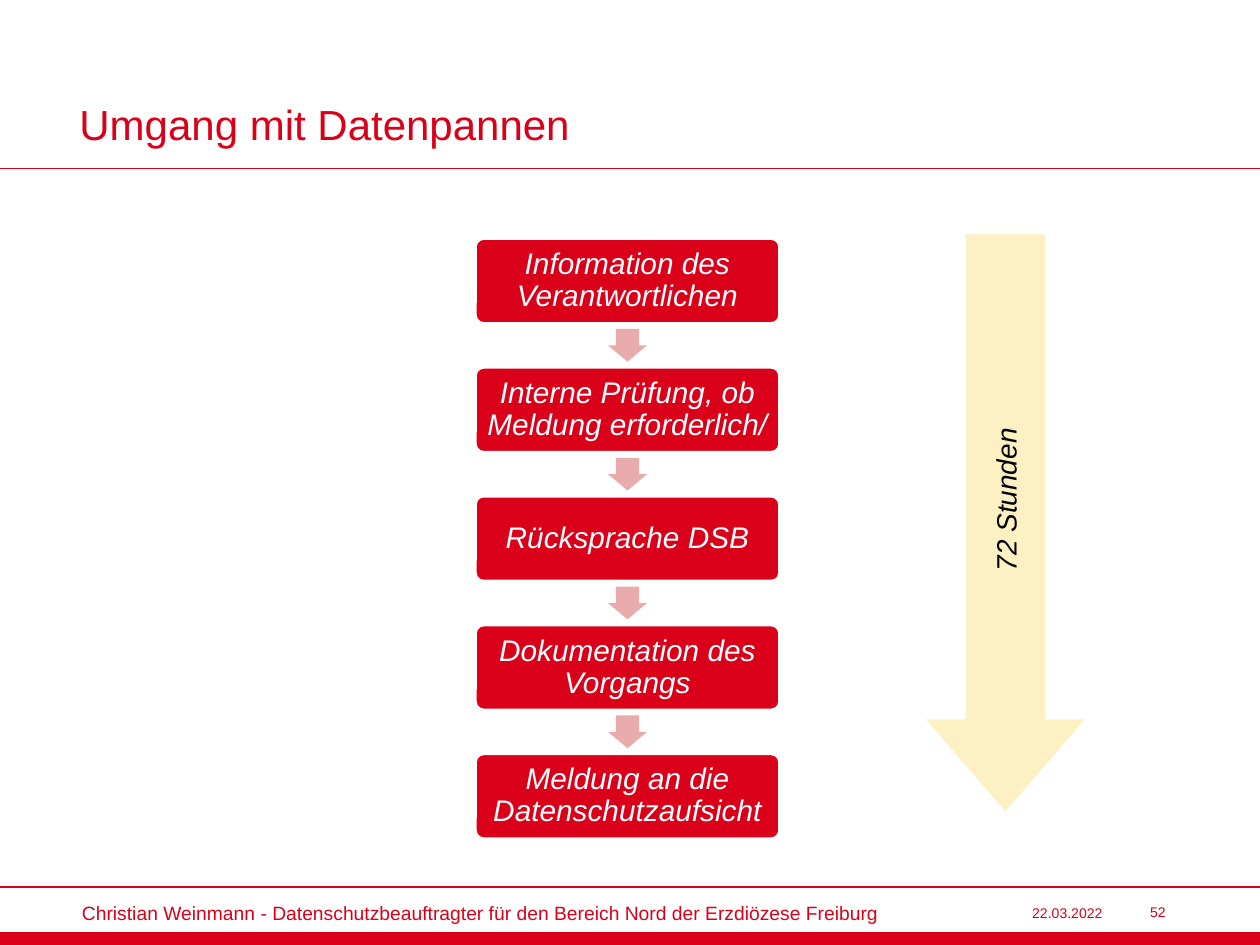
from lxml.etree import SubElement
from pptx import Presentation
from pptx.dml.color import RGBColor
from pptx.enum.shapes import MSO_CONNECTOR as Connector, MSO_SHAPE as Shape
from pptx.enum.text import MSO_ANCHOR as Anchor, MSO_AUTO_SIZE as AutoSize, PP_ALIGN as Align
from pptx.oxml.ns import qn
from pptx.util import Inches, Pt

COLORS = {"red": "DA001A", "pink": "EAABAC", "cream": "FDF0C3", "white": "FFFFFF", "black": "000000"}
FONT = "Arial"
STEPS = [
    "Information des Verantwortlichen",
    "Interne Prüfung, ob Meldung erforderlich/",
    "Rücksprache DSB",
    "Dokumentation des Vorgangs",
    "Meldung an die Datenschutzaufsicht",
]


def color(name):
    """Return the named colour."""
    return RGBColor.from_string(COLORS[name])


def write(shape, text, size, name, align=Align.LEFT, anchor=Anchor.MIDDLE,
          margins=(0.1, 0.05, 0.1, 0.05), wrap=True, italic=False):
    """Write one formatted run into a shape and return its paragraph."""
    frame = shape.text_frame
    frame.auto_size = AutoSize.NONE
    frame.word_wrap = wrap
    frame.vertical_anchor = anchor
    (frame.margin_left, frame.margin_top,
     frame.margin_right, frame.margin_bottom) = map(Inches, margins)
    paragraph = frame.paragraphs[0]
    paragraph.alignment = align
    run = paragraph.add_run()
    run.text = text
    run.font.name = FONT
    run.font.size = Pt(size)
    run.font.italic = italic
    run.font.color.rgb = color(name)
    return paragraph


def add_label(slide, box, text, size, **options):
    """Add a red text box."""
    label = slide.shapes.add_textbox(*map(Inches, box))
    write(label, text, size, "red", **options)


def add_filled(slide, kind, box, fill, line=None, width=0.75):
    """Add a flat preset shape with an optional outline."""
    shape = slide.shapes.add_shape(kind, *map(Inches, box))
    shape.shadow.inherit = False
    shape.fill.solid()
    shape.fill.fore_color.rgb = color(fill)
    if line:
        shape.line.color.rgb = color(line)
        shape.line.width = Pt(width)
    else:
        shape.line.fill.background()
    return shape


def add_rule(slide, left, top, width):
    """Add a thin red horizontal rule."""
    rule = slide.shapes.add_connector(
        Connector.STRAIGHT, *map(Inches, (left, top, left + width, top)))
    rule.line.color.rgb = color("red")
    rule.line.width = Pt(0.75)
    SubElement(rule.element.spPr, qn("a:effectLst"))


def add_header(slide, left, top, width, height):
    """Place the title above its rule."""
    add_label(slide, (left + 0.63, top + 0.2, 7.69, 0.98), "Umgang mit Datenpannen", 24,
              anchor=Anchor.BOTTOM, margins=(0, 0.05, 0.1, 0))
    add_rule(slide, left, top + height, width)


def add_footer(slide, left, top, width, height):
    """Place the rule, author, date, page number and bottom band."""
    add_rule(slide, left, top, width)
    add_filled(slide, Shape.RECTANGLE, (left, top + height - 0.1, width, 0.1), "red", "red")
    add_label(slide, (left + 0.65, top + 0.06, 6.51, 0.29),
              "Christian Weinmann - Datenschutzbeauftragter für den Bereich Nord der Erzdiözese Freiburg",
              11, margins=(0, 0.05, 0.1, 0.05), wrap=False)
    add_label(slide, (left + 7.11, top + 0.09, 1.74, 0.23), "22.03.2022", 8, align=Align.RIGHT)
    add_label(slide, (left + 8.85, top + 0.07, 0.5, 0.25), "52", 8, align=Align.RIGHT, wrap=False)


def add_process(slide, left, top, width, height):
    """Stack the steps evenly, with an arrow in each gap."""
    step_height, arrow_length, arrow_width = 0.68, 0.26, 0.31
    pitch = (height - step_height) / (len(STEPS) - 1)
    for index, text in enumerate(STEPS):
        step_top = top + index * pitch
        step = add_filled(slide, Shape.ROUNDED_RECTANGLE,
                          (left, step_top, width, step_height), "red", "white", 2)
        step.adjustments[0] = 0.1
        paragraph = write(step, text, 17, "white", align=Align.CENTER,
                          margins=(0.06, 0.07, 0.06, 0.07), italic=True)
        paragraph.line_spacing = 0.9
        if index < len(STEPS) - 1:
            center = step_top + (step_height + pitch) / 2
            arrow = add_filled(slide, Shape.RIGHT_ARROW,
                               (left + (width - arrow_length) / 2, center - arrow_width / 2,
                                arrow_length, arrow_width), "pink")
            arrow.rotation = 90
            arrow.adjustments[0] = 0.6
            arrow.adjustments[1] = 0.5


def add_deadline(slide, left, top, width, height):
    """Place the long arrow with its upward-reading time limit."""
    arrow = add_filled(slide, Shape.DOWN_ARROW, (left, top, width, height), "cream")
    arrow.adjustments[0] = 0.5
    arrow.adjustments[1] = 0.58
    write(arrow, "72 Stunden", 16, "black", align=Align.CENTER, wrap=False, italic=True)
    arrow.element.txBody.find(qn("a:bodyPr")).set("vert", "vert270")


def main():
    """Build and save the slide."""
    presentation = Presentation()
    presentation.slide_width = Inches(10)
    presentation.slide_height = Inches(7.5)
    slide = presentation.slides.add_slide(presentation.slide_layouts[6])
    add_header(slide, 0, 0, 10, 1.34)
    add_footer(slide, 0, 7.04, 10, 0.46)
    add_process(slide, 3.77, 1.89, 2.42, 4.77)
    add_deadline(slide, 7.35, 1.86, 1.26, 4.58)
    presentation.save("out.pptx")


if __name__ == "__main__":
    main()
